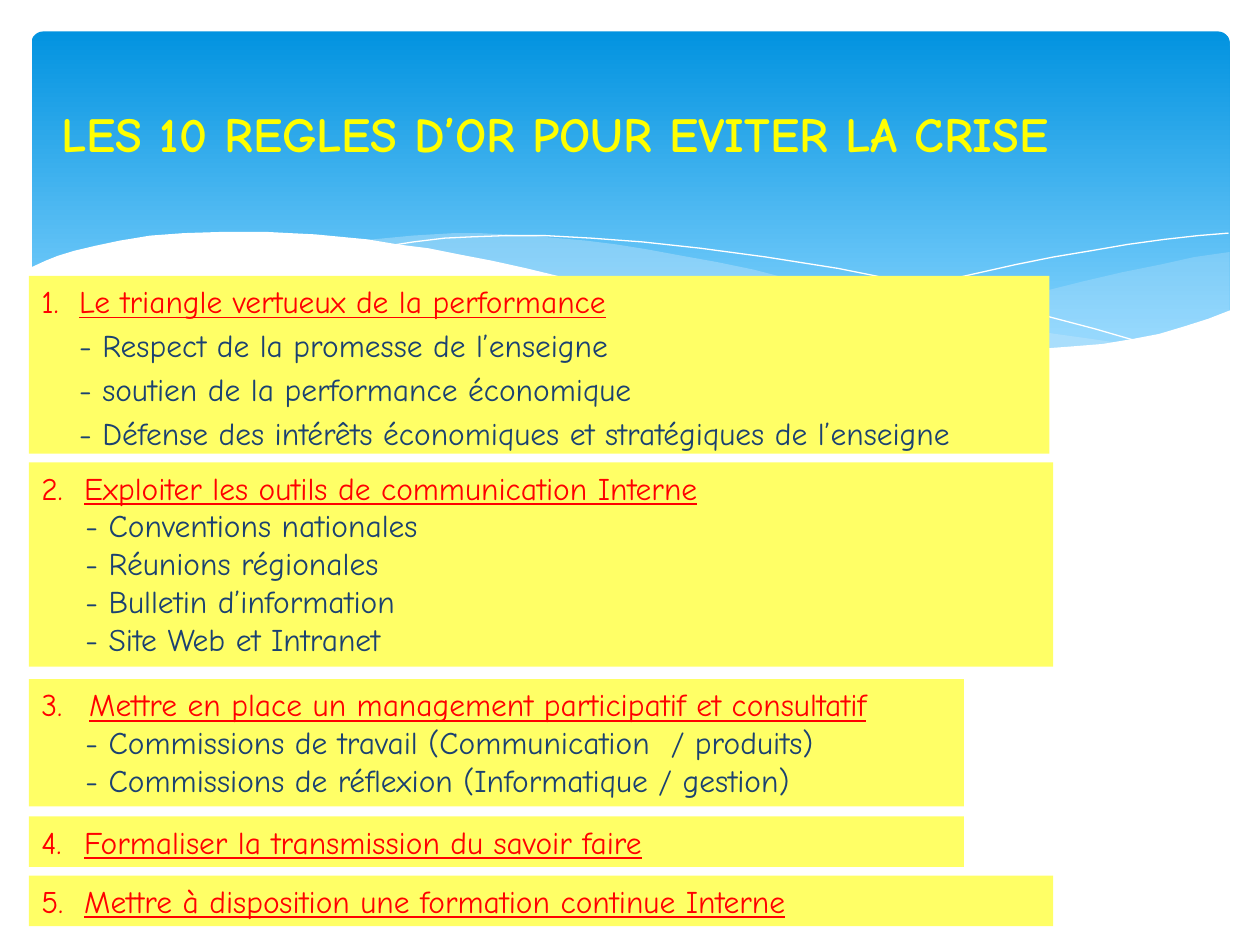
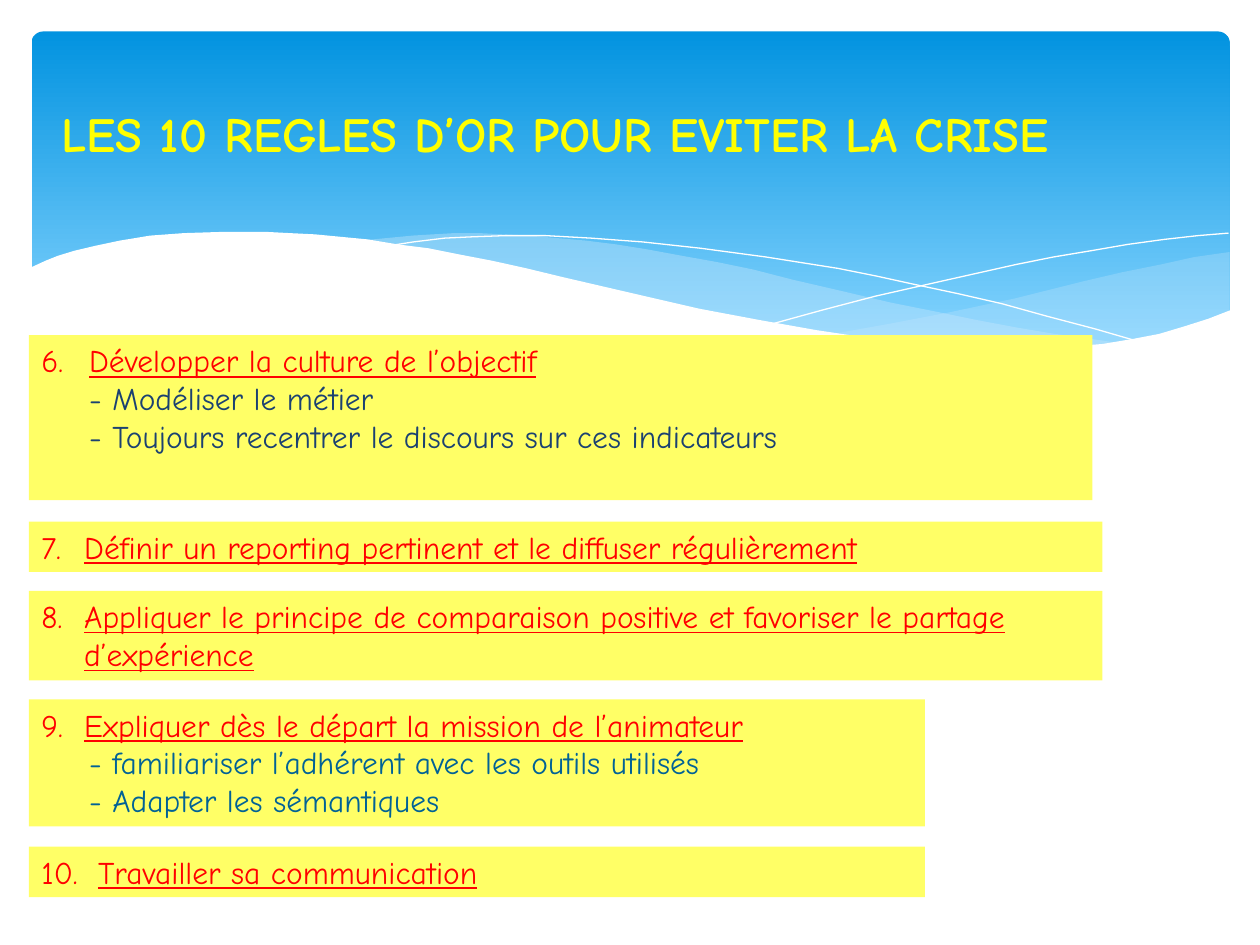
from dataclasses import dataclass

from lxml.etree import SubElement
from pptx import Presentation
from pptx.dml.color import RGBColor
from pptx.enum.shapes import MSO_SHAPE as Preset, PP_PLACEHOLDER as Holder
from pptx.enum.text import MSO_ANCHOR as Anchor, MSO_AUTO_SIZE as AutoSize, PP_ALIGN as Align
from pptx.oxml.ns import qn
from pptx.util import Inches, Pt


@dataclass(frozen=True)
class Theme:
    """Colours, font and type sizes shared by the slides."""

    font: str = "Comic Neue"
    title_size: int = 28
    text_size: int = 18
    title: str = "FFFF00"
    panel: str = "FFFF66"
    heading: str = "FF0000"
    detail: str = "1B4171"
    accent_detail: str = "016296"
    sky_top: str = "0293E0"
    sky_bottom: str = "83D3FE"
    mist: str = "C6E7FC"
    white: str = "FFFFFF"


THEME = Theme()
TITLE = "LES 10 REGLES D’OR POUR EVITER LA CRISE"
PANEL_LEFT = 0.23


@dataclass(frozen=True)
class Rule:
    """One numbered golden rule and the panel that holds it."""

    number: int
    heading: str
    top: float
    width: float
    height: float
    details: tuple = ()
    heading_indent: float = 0.34
    detail_indent: float = 0.35
    detail_color: str = THEME.detail
    space_before: float = 0


FIRST_RULES = (
    Rule(1, "Le triangle vertueux de la performance", 2.19, 8.1, 1.41,
         ("Respect de la promesse de l’enseigne",
          "soutien de la performance économique",
          "Défense des intérêts économiques et stratégiques de l’enseigne"),
         heading_indent=0.3, detail_indent=0.3, space_before=3.6),
    Rule(2, "Exploiter les outils de communication Interne", 3.67, 8.13, 1.62,
         ("Conventions nationales", "Réunions régionales",
          "Bulletin d’information", "Site Web et Intranet")),
    Rule(3, "Mettre en place un management participatif et consultatif", 5.39, 7.42, 1.01,
         ("Commissions de travail (Communication  / produits)",
          "Commissions de réflexion (Informatique / gestion)"),
         heading_indent=0.38),
    Rule(4, "Formaliser la transmission du savoir faire", 6.48, 7.42, 0.4),
    Rule(5, "Mettre à disposition une formation continue Interne", 6.95, 8.13, 0.4),
)

LAST_RULES = (
    Rule(6, "Développer la culture de l’objectif", 2.66, 8.44, 1.31,
         ("Modéliser le métier", "Toujours recentrer le discours sur ces indicateurs"),
         heading_indent=0.38, detail_indent=0.38),
    Rule(7, "Définir un reporting pertinent et le diffuser régulièrement", 4.14, 8.52, 0.4),
    Rule(8, "Appliquer le principe de comparaison positive et favoriser le partage d’expérience",
         4.69, 8.52, 0.71),
    Rule(9, "Expliquer dès le départ la mission de l’animateur", 5.55, 7.11, 1.01,
         ("familiariser l’adhérent avec les outils utilisés", "Adapter les sémantiques"),
         detail_indent=0.38, detail_color=THEME.accent_detail),
    Rule(10, "Travailler sa communication", 6.72, 7.11, 0.4, heading_indent=0.45),
)

RIGHT_MIST = (
    (9.76, 2), (9.48, 2.04), (9.21, 2.1), (8.91, 2.16), (8.61, 2.23), (8.05, 2.37),
    (7.53, 2.48), (7.06, 2.57), (6.61, 2.65), (6.91, 2.69), (7.19, 2.72), (7.45, 2.75),
    (7.69, 2.77), (8.03, 2.78), (8.35, 2.77), (8.63, 2.75), (8.89, 2.72), (9.13, 2.67),
    (9.35, 2.62), (9.49, 2.57), (9.63, 2.52), (9.76, 2.47),
)
CENTRE_MIST = (
    (8.93, 2.73), (8.66, 2.69), (8.37, 2.65), (8.07, 2.6), (7.75, 2.54), (7.41, 2.47),
    (7.06, 2.4), (6.68, 2.31), (6.29, 2.22), (5.98, 2.14), (5.69, 2.08), (5.41, 2.03),
    (5.14, 1.98), (4.89, 1.94), (4.65, 1.91), (4.42, 1.89), (4.2, 1.87), (3.99, 1.86),
    (3.8, 1.85), (3.61, 1.85), (3.28, 1.87), (2.86, 1.91), (3.23, 1.96), (3.62, 2.03),
    (4.04, 2.11), (4.49, 2.22), (4.91, 2.32), (5.3, 2.4), (5.66, 2.48), (6.01, 2.55),
    (6.34, 2.61), (6.65, 2.66), (6.95, 2.7), (7.22, 2.74), (7.48, 2.76), (7.85, 2.78),
    (8.28, 2.78), (8.57, 2.77), (8.76, 2.75),
)
FALLING_LINE = (
    (3.09, 1.95), (3.28, 1.92), (3.53, 1.89), (3.74, 1.88), (4.01, 1.87), (4.33, 1.87),
    (4.69, 1.89), (5.1, 1.92), (5.56, 1.97), (6.08, 2.04), (6.65, 2.13), (6.95, 2.19),
    (7.27, 2.26), (7.6, 2.33), (7.95, 2.41), (8.31, 2.51), (8.69, 2.61), (9.07, 2.72),
)
RISING_LINE = (
    (6.13, 2.57), (6.53, 2.46), (6.95, 2.35), (7.48, 2.23), (8.06, 2.1), (8.36, 2.04),
    (8.66, 1.99), (8.95, 1.94), (9.24, 1.9), (9.51, 1.87), (9.75, 1.85),
)
WHITE_WAVE = (
    (9.77, 2.46), (9.59, 2.53), (9.4, 2.59), (9.2, 2.65), (8.99, 2.69), (8.75, 2.73),
    (8.5, 2.75), (8.23, 2.77), (7.93, 2.76), (7.61, 2.75), (7.26, 2.72), (6.88, 2.68),
    (6.48, 2.62), (6.03, 2.54), (5.55, 2.45), (5.03, 2.33), (4.47, 2.2), (4.18, 2.13),
    (3.91, 2.07), (3.65, 2.02), (3.4, 1.97), (3.16, 1.94), (2.92, 1.9), (2.71, 1.88),
    (2.5, 1.86), (2.3, 1.85), (2.11, 1.84), (1.77, 1.84), (1.46, 1.85), (1.19, 1.87),
    (0.95, 1.91), (0.76, 1.95), (0.59, 1.99), (0.46, 2.03), (0.36, 2.07), (0.23, 2.13),
    (0.23, 3.29), (9.77, 3.29),
)


def rgb(color):
    """Turn a hex string into a colour."""
    return RGBColor.from_string(color)


def place(shape, left, top, width, height):
    """Set the position and size of a shape in inches."""
    shape.left, shape.top = Inches(left), Inches(top)
    shape.width, shape.height = Inches(width), Inches(height)


def format_run(run, color, size=THEME.text_size, bold=False, underline=False):
    """Apply the theme font with the given emphasis."""
    font = run.font
    font.name, font.size = THEME.font, Pt(size)
    font.bold, font.underline = bold, underline
    font.color.rgb = rgb(color)


def add_curve(slide, points, closed):
    """Add an outline through points given in inches."""
    corners = [(Inches(x), Inches(y)) for x, y in points]
    builder = slide.shapes.build_freeform(*corners[0])
    builder.add_line_segments(corners[1:], close=closed)
    shape = builder.convert_to_shape()
    shape.shadow.inherit = False
    return shape


def add_wave(slide, points, color, opacity=100):
    """Add a filled wave, see-through when opacity is below 100 percent."""
    shape = add_curve(slide, points, True)
    shape.fill.solid()
    shape.fill.fore_color.rgb = rgb(color)
    shape.line.fill.background()
    if opacity < 100:
        color_element = shape.element.spPr.find(".//" + qn("a:srgbClr"))
        SubElement(color_element, qn("a:alpha")).set("val", str(opacity * 1000))
    return shape


def add_hairline(slide, points):
    """Add a thin white curve."""
    shape = add_curve(slide, points, False)
    shape.fill.background()
    shape.line.color.rgb = rgb(THEME.white)
    shape.line.width = Pt(0)
    return shape


def add_sky(slide):
    """Add the rounded blue gradient band."""
    sky = slide.shapes.add_shape(
        Preset.ROUNDED_RECTANGLE, Inches(0.25), Inches(0.25), Inches(9.51), Inches(2.7))
    sky.adjustments[0] = 0.034
    sky.shadow.inherit = False
    sky.line.fill.background()
    sky.fill.gradient()
    sky.fill.gradient_angle = 270
    stops = ((0, THEME.sky_top), (0.9, THEME.sky_bottom))
    for stop, (position, color) in zip(sky.fill.gradient_stops, stops):
        stop.position = position
        stop.color.rgb = rgb(color)
    return sky


def prepare_layout(layout):
    """Keep only the title placeholder and place it on the band."""
    for placeholder in list(layout.placeholders):
        if placeholder.placeholder_format.type == Holder.TITLE:
            place(placeholder, 0.39, 0.37, 9.38, 1.37)
        else:
            placeholder.element.getparent().remove(placeholder.element)


def move_banner_to_layout(slide):
    """Draw the banner once and hand it to the layout of the slide."""
    banner = (
        add_sky(slide),
        add_wave(slide, RIGHT_MIST, THEME.mist, 29),
        add_wave(slide, CENTRE_MIST, THEME.mist, 40),
        add_hairline(slide, FALLING_LINE),
        add_hairline(slide, RISING_LINE),
        add_wave(slide, WHITE_WAVE, THEME.white),
    )
    for shape in banner:
        slide.slide_layout.shapes.element.append(shape.element)


def write_title(slide):
    """Fill and format the title placeholder."""
    title = slide.shapes.title
    place(title, 0.39, 0.37, 9.38, 1.37)
    text_frame = title.text_frame
    text_frame.text = TITLE
    text_frame.auto_size = AutoSize.NONE
    text_frame.vertical_anchor = Anchor.MIDDLE
    paragraph = text_frame.paragraphs[0]
    paragraph.alignment = Align.LEFT
    format_run(paragraph.runs[0], THEME.title, THEME.title_size, bold=True)


def indent(paragraph, left, hanging=0):
    """Set the left margin and the hanging part of a paragraph."""
    properties = paragraph._p.get_or_add_pPr()
    properties.set("marL", str(Inches(left)))
    properties.set("indent", str(-Inches(hanging)))
    paragraph.alignment = Align.LEFT


def add_rule(slide, rule):
    """Add the yellow panel of one rule with its heading and details."""
    panel = slide.shapes.add_shape(
        Preset.RECTANGLE, Inches(PANEL_LEFT), Inches(rule.top),
        Inches(rule.width), Inches(rule.height))
    panel.shadow.inherit = False
    panel.fill.solid()
    panel.fill.fore_color.rgb = rgb(THEME.panel)
    panel.line.fill.background()
    text_frame = panel.text_frame
    text_frame.word_wrap = True
    text_frame.vertical_anchor = Anchor.TOP

    heading = text_frame.paragraphs[0]
    heading.text = f"{rule.number}.\t"
    indent(heading, rule.heading_indent, rule.heading_indent)
    format_run(heading.runs[0], THEME.heading)
    run = heading.add_run()
    run.text = rule.heading
    format_run(run, THEME.heading, underline=True)

    for detail in rule.details:
        paragraph = text_frame.add_paragraph()
        paragraph.text = f"- {detail}"
        paragraph.space_before = Pt(rule.space_before)
        indent(paragraph, rule.detail_indent)
        format_run(paragraph.runs[0], rule.detail_color)


def main():
    """Build the two slides and save them."""
    presentation = Presentation()
    presentation.slide_width, presentation.slide_height = Inches(10), Inches(7.5)
    layout = presentation.slide_layouts.get_by_name("Title Only")
    prepare_layout(layout)
    slides = [presentation.slides.add_slide(layout) for _ in range(2)]
    move_banner_to_layout(slides[0])
    for slide, rules in zip(slides, (FIRST_RULES, LAST_RULES)):
        write_title(slide)
        for rule in rules:
            add_rule(slide, rule)
    presentation.save("out.pptx")


if __name__ == "__main__":
    main()
